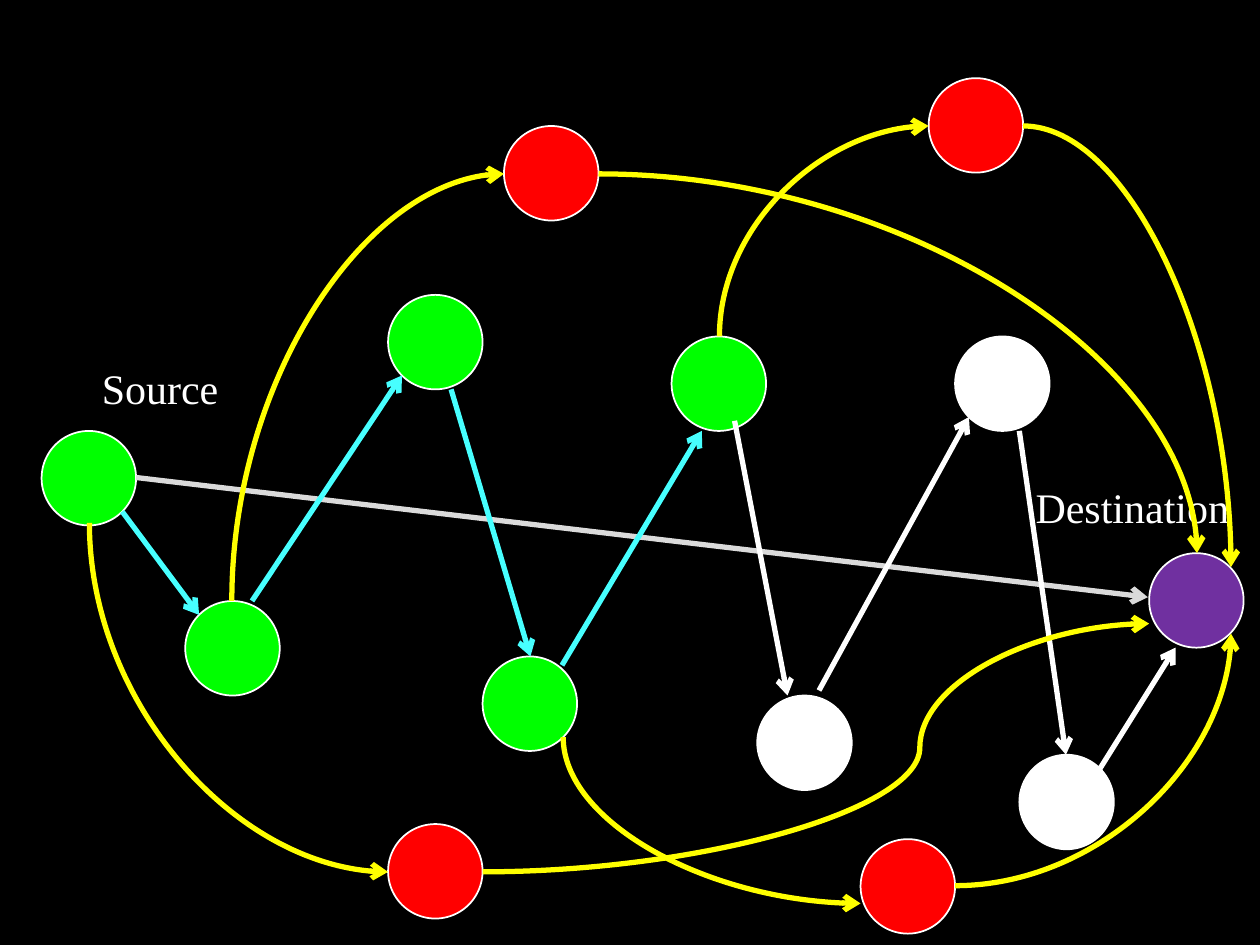
from dataclasses import dataclass
from math import copysign

from lxml.etree import SubElement
from pptx import Presentation
from pptx.dml.color import RGBColor
from pptx.enum.shapes import MSO_CONNECTOR as Link, MSO_SHAPE as Shape
from pptx.enum.text import MSO_AUTO_SIZE as AutoSize
from pptx.oxml.ns import qn
from pptx.util import Inches, Pt

BLACK, WHITE, GREEN, RED = "000000", "FFFFFF", "00FF00", "FF0000"
PURPLE, CYAN, YELLOW, GREY = "7030A0", "47FFFF", "FFFF00", "DADADA"
NODE_SIZE = 0.75


@dataclass
class Node:
    left: float
    top: float
    color: str


@dataclass
class Label:
    left: float
    top: float
    width: float
    text: str


@dataclass
class Hop:
    """A straight arrow."""
    x1: float
    y1: float
    x2: float
    y2: float
    color: str


@dataclass
class Detour:
    """A curved arrow; bend is set on S-shaped ones, else it is a quarter arc."""
    x1: float
    y1: float
    x2: float
    y2: float
    leaves_vertically: bool = False
    bend: float | None = None


NODES = [
    Node(0.33, 3.42, GREEN),
    Node(9.12, 4.39, PURPLE),
    Node(1.47, 4.77, GREEN),
    Node(3.08, 2.34, GREEN),
    Node(3.83, 5.21, GREEN),
    Node(5.33, 2.67, GREEN),
    Node(6.01, 5.52, WHITE),
    Node(7.58, 2.67, WHITE),
    Node(8.09, 5.99, WHITE),
    Node(3.08, 6.54, RED),
    Node(4, 1, RED),
    Node(6.83, 6.66, RED),
    Node(7.37, 0.62, RED),
]
LABELS = [
    Label(0.71, 2.83, 1.14, "Source"),
    Label(8.12, 3.77, 1.75, "Destination"),
]
HOPS = [
    Hop(1.08, 3.79, 9.11, 4.74, GREY),
    Hop(0.97, 4.06, 1.58, 4.88, CYAN),
    Hop(2, 4.77, 3.19, 2.98, CYAN),
    Hop(3.58, 3.09, 4.21, 5.21, CYAN),
    Hop(4.46, 5.28, 5.57, 3.42, CYAN),
    Hop(5.83, 3.34, 6.25, 5.52, WHITE),
    Hop(6.5, 5.48, 7.69, 3.31, WHITE),
    Hop(8.09, 3.42, 8.46, 5.99, WHITE),
    Hop(8.73, 6.1, 9.33, 5.14, WHITE),
]
DETOURS = [
    Detour(0.71, 4.15, 3.08, 6.92, leaves_vertically=True),
    Detour(3.83, 6.92, 9.12, 4.95, bend=0.656),
    Detour(1.84, 4.77, 4, 1.38, leaves_vertically=True),
    Detour(4.75, 1.38, 9.5, 4.39),
    Detour(4.47, 5.85, 6.83, 7.17, leaves_vertically=True),
    Detour(7.58, 7.03, 9.77, 5.03),
    Detour(5.71, 2.67, 7.37, 1, leaves_vertically=True),
    Detour(8.12, 1, 9.77, 4.5),
]


def rgb(color: str) -> RGBColor:
    return RGBColor.from_string(color)


def draw_node(shapes, node: Node) -> None:
    circle = shapes.add_shape(Shape.OVAL, Inches(node.left), Inches(node.top),
                              Inches(NODE_SIZE), Inches(NODE_SIZE))
    circle.shadow.inherit = False
    circle.fill.solid()
    circle.fill.fore_color.rgb = rgb(node.color)
    circle.line.color.rgb = rgb(WHITE)
    circle.line.width = Pt(1)


def draw_label(shapes, label: Label) -> None:
    box = shapes.add_textbox(Inches(label.left), Inches(label.top),
                             Inches(label.width), Inches(0.5))
    frame = box.text_frame
    frame.word_wrap = False
    frame.auto_size = AutoSize.SHAPE_TO_FIT_TEXT
    run = frame.paragraphs[0].add_run()
    run.text = label.text
    run.font.name = "Times New Roman"
    run.font.size = Pt(24)
    run.font.color.rgb = rgb(WHITE)


def add_arrow(shapes, kind: Link, x1: float, y1: float, x2: float, y2: float,
              color: str):
    arrow = shapes.add_connector(kind, Inches(x1), Inches(y1), Inches(x2), Inches(y2))
    arrow.line.color.rgb = rgb(color)
    arrow.line.width = Pt(3)
    properties = arrow._element.spPr
    SubElement(properties.find(qn("a:ln")), qn("a:tailEnd"), type="arrow")
    SubElement(properties, qn("a:effectLst"))
    return arrow


def draw_hop(shapes, hop: Hop) -> None:
    add_arrow(shapes, Link.STRAIGHT, hop.x1, hop.y1, hop.x2, hop.y2, hop.color)


def draw_detour(shapes, detour: Detour) -> None:
    x1, y1, x2, y2 = detour.x1, detour.y1, detour.x2, detour.y2
    rise = y2 - y1
    if detour.leaves_vertically:
        # A quarter turn about the centre swaps the box's width and height.
        center_x, center_y = (x1 + x2) / 2, (y1 + y2) / 2
        half_width = abs(rise) / 2
        half_height = copysign((x2 - x1) / 2, rise)
        x1, x2 = center_x + half_width, center_x - half_width
        y1, y2 = center_y - half_height, center_y + half_height
    arrow = add_arrow(shapes, Link.CURVE, x1, y1, x2, y2, YELLOW)
    properties = arrow._element.spPr
    if detour.leaves_vertically:
        degrees = 270 if rise > 0 else 90
        properties.find(qn("a:xfrm")).set("rot", str(degrees * 60000))
    geometry = properties.find(qn("a:prstGeom"))
    if detour.bend is None:
        geometry.set("prst", "curvedConnector2")
    else:
        SubElement(geometry.find(qn("a:avLst")), qn("a:gd"), name="adj1",
                   fmla=f"val {round(detour.bend * 100000)}")


def main() -> None:
    deck = Presentation()
    deck.slide_width, deck.slide_height = Inches(10), Inches(7.5)
    slide = deck.slides.add_slide(deck.slide_layouts[6])
    slide.background.fill.solid()
    slide.background.fill.fore_color.rgb = rgb(BLACK)

    for node in NODES:
        draw_node(slide.shapes, node)
    for label in LABELS:
        draw_label(slide.shapes, label)
    for hop in HOPS:
        draw_hop(slide.shapes, hop)
    for detour in DETOURS:
        draw_detour(slide.shapes, detour)
    deck.save("out.pptx")


if __name__ == "__main__":
    main()
